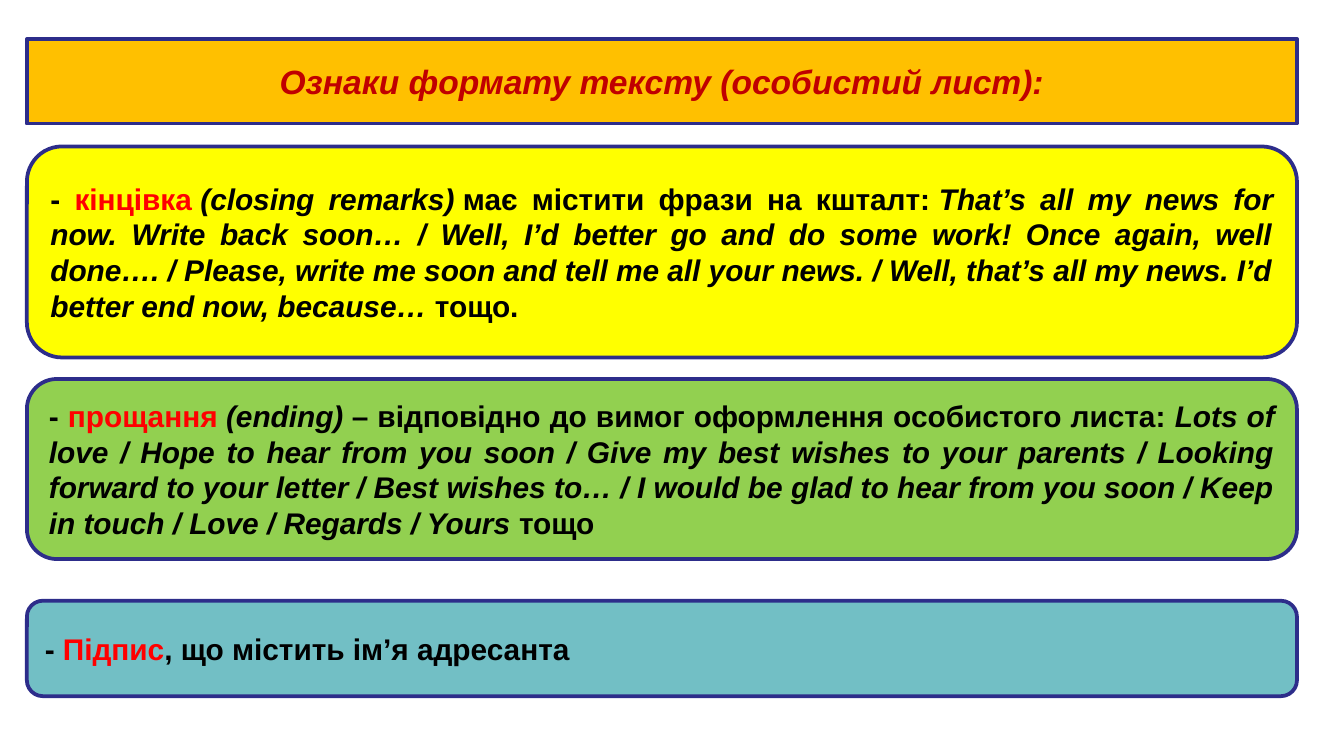
from dataclasses import dataclass

from pptx import Presentation
from pptx.dml.color import RGBColor
from pptx.enum.shapes import MSO_SHAPE
from pptx.enum.text import MSO_ANCHOR, PP_ALIGN
from pptx.util import Inches, Pt

RECTANGLE = MSO_SHAPE.RECTANGLE
ROUNDED = MSO_SHAPE.ROUNDED_RECTANGLE
MIDDLE = MSO_ANCHOR.MIDDLE
CENTER = PP_ALIGN.CENTER
JUSTIFY = PP_ALIGN.JUSTIFY
HARD_SPACE = chr(160)


@dataclass(frozen=True)
class Theme:
    font: str = "Arial"
    title_size: float = 18
    body_size: float = 16
    line_width: float = 2
    outline: str = "2D2D8A"
    title: str = "C00000"
    title_fill: str = "FFC000"
    keyword: str = "FF0000"
    text: str = "000000"
    closing: str = "FFFF00"
    ending: str = "92D050"
    signature: str = "72BFC5"


THEME = Theme()
LEFT, WIDTH = 0.2, 9.45
TITLE = "Ознаки формату тексту (особистий лист):"
TITLE_BOX = (LEFT, 0.29, WIDTH, 0.63)

KEYWORD = {"color": THEME.keyword}
PLAIN = {}
ITALIC = {"italic": True}

CARDS = [
    (1.09, 1.57, THEME.closing, [
        ("- ", PLAIN),
        (f"кінцівка{HARD_SPACE}", KEYWORD),
        (f"(closing remarks){HARD_SPACE}", ITALIC),
        (f"має містити фрази на кшталт:{HARD_SPACE}", PLAIN),
        ("That’s all my news for now. Write back soon… / Well, I’d better go "
         "and do some work! Once again, well done…. / Please, write me soon "
         "and tell me all your news. / Well, that’s all my news. I’d better "
         "end now, because…", ITALIC),
        (f"{HARD_SPACE}тощо.", PLAIN),
    ]),
    (2.82, 1.34, THEME.ending, [
        ("- ", PLAIN),
        (f"прощання{HARD_SPACE}", KEYWORD),
        ("(ending)", ITALIC),
        (f"{HARD_SPACE}– відповідно до вимог оформлення особистого "
         f"листа:{HARD_SPACE}", PLAIN),
        ("Lots of love / Hope to hear from you soon / Give my best wishes to "
         "your parents / Looking forward to your letter / Best wishes to… / "
         "I would be glad to hear from you soon / Keep in touch / Love / "
         "Regards / Yours", ITALIC),
        (f"{HARD_SPACE}тощо", PLAIN),
    ]),
    (4.47, 0.71, THEME.signature, [
        ("- ", PLAIN),
        ("Підпис", KEYWORD),
        (", що містить ім’я адресанта", PLAIN),
    ]),
]


def add_panel(slide, kind, box, fill):
    shape = slide.shapes.add_shape(kind, *map(Inches, box))
    shape.shadow.inherit = False
    shape.fill.solid()
    shape.fill.fore_color.rgb = RGBColor.from_string(fill)
    shape.line.color.rgb = RGBColor.from_string(THEME.outline)
    shape.line.width = Pt(THEME.line_width)
    shape.text_frame.word_wrap = True
    shape.text_frame.vertical_anchor = MIDDLE
    return shape


def add_run(paragraph, text, size, color=THEME.text, italic=False):
    run = paragraph.add_run()
    run.text = text
    values = {"name": THEME.font, "size": Pt(size), "bold": True, "italic": italic}
    for name, value in values.items():
        setattr(run.font, name, value)
    run.font.color.rgb = RGBColor.from_string(color)


def add_title(slide, box):
    shape = add_panel(slide, RECTANGLE, box, THEME.title_fill)
    paragraph = shape.text_frame.paragraphs[0]
    paragraph.alignment = CENTER
    add_run(paragraph, TITLE, THEME.title_size, THEME.title, italic=True)


def add_card(slide, box, fill, pieces):
    shape = add_panel(slide, ROUNDED, box, fill)
    paragraph = shape.text_frame.paragraphs[0]
    paragraph.alignment = JUSTIFY
    for text, style in pieces:
        add_run(paragraph, text, THEME.body_size, **style)


def main():
    presentation = Presentation()
    presentation.slide_width = Inches(10)
    presentation.slide_height = presentation.slide_width * 9 // 16
    slide = presentation.slides.add_slide(presentation.slide_layouts[6])
    add_title(slide, TITLE_BOX)
    for top, height, fill, pieces in CARDS:
        add_card(slide, (LEFT, top, WIDTH, height), fill, pieces)
    presentation.save("out.pptx")


if __name__ == "__main__":
    main()
